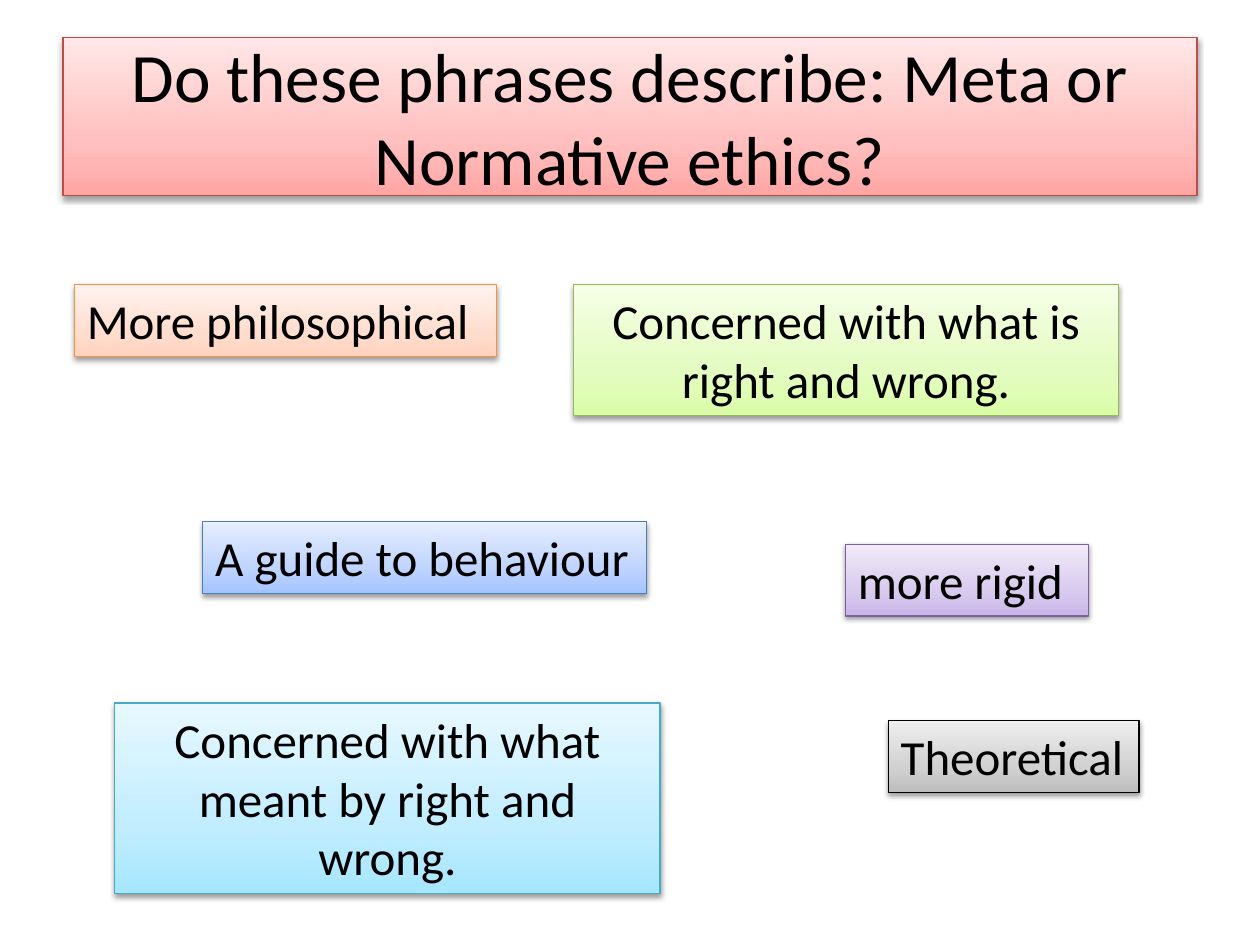
from copy import deepcopy

from lxml import etree
from pptx import Presentation
from pptx.dml.color import RGBColor
from pptx.enum import text as t
from pptx.oxml import ns
from pptx.util import Inches, Pt

# Each tone: gradient from bottom to top, then the outline
TONES = {
    "red": ("FFA6A5", "FFC0BF", "FFE7E7", "BF4C48"),
    "gray": ("BDBDBD", "D1D1D1", "EEEEEE", "000000"),
    "blue": ("A4C4FF", "BFD4FF", "E6EEFF", "4B7EBC"),
    "purple": ("C9B5E8", "D8CBEE", "F0EAF9", "7D60A0"),
    "orange": ("FFD2BD", "FFDED0", "FFF2ED", "F69240"),
    "green": ("DAFDA7", "E4FCC2", "F5FFE7", "98B955"),
    "aqua": ("A7E6FF", "C1EDFF", "E7F8FF", "46AAC5"),
}
INK = "000000"
STOPS = (0, 0.35, 1)

LEFT, MID = t.PP_ALIGN.LEFT, t.PP_ALIGN.CENTER
PHRASES = [
    ("Theoretical", "gray", (7.05, 5.72, 1.99, 0.57), LEFT),
    ("A guide to behaviour", "blue", (1.61, 4.14, 3.52, 0.57), LEFT),
    ("more rigid", "purple", (6.71, 4.32, 1.93, 0.57), LEFT),
    ("More philosophical", "orange", (0.59, 2.26, 3.35, 0.57), LEFT),
    ("Concerned with what is right and wrong.", "green",
     (4.55, 2.26, 4.33, 1.04), MID),
    ("Concerned with what meant by right and wrong.", "aqua",
     (0.91, 5.58, 4.33, 1.51), MID),
]


def write(shape, words, size=28, align=LEFT, anchor=t.MSO_ANCHOR.TOP,
          fit=t.MSO_AUTO_SIZE.SHAPE_TO_FIT_TEXT):
    frame = shape.text_frame
    frame.word_wrap = True
    frame.auto_size = fit
    frame.vertical_anchor = anchor
    para = frame.paragraphs[0]
    para.alignment = align
    run = para.add_run()
    run.text = words
    run.font.name = "Calibri"
    run.font.size = Pt(size)
    run.font.color.rgb = RGBColor.from_string(INK)


def shade(shape):
    """Add a soft shadow just below the shape."""
    props = shape.element.spPr
    effects = etree.SubElement(props, ns.qn("a:effectLst"))
    shadow = etree.SubElement(
        effects, ns.qn("a:outerShdw"), blurRad=str(Pt(3.1)),
        dist=str(Pt(1.6)), dir="5400000", rotWithShape="0")
    color = etree.SubElement(shadow, ns.qn("a:srgbClr"), val=INK)
    etree.SubElement(color, ns.qn("a:alpha"), val="38000")


def paint(shape, tone):
    """Give the shape its gradient, outline and shadow."""
    *fills, edge = TONES[tone]
    shape.fill.gradient()
    shape.fill.gradient_angle = 90
    stops = shape.element.spPr.find(".//" + ns.qn("a:gsLst"))
    stops.append(deepcopy(stops[0]))
    for stop, place, color in zip(shape.fill.gradient_stops, STOPS, fills):
        stop.position = place
        stop.color.rgb = RGBColor.from_string(color)
    shape.line.color.rgb = RGBColor.from_string(edge)
    shape.line.width = Pt(0.75)
    shade(shape)


def add_title(slide, words):
    title = slide.shapes.title
    title.left, title.top = Inches(0.5), Inches(0.3)
    title.width, title.height = Inches(9), Inches(1.25)
    paint(title, "red")
    write(title, words, size=39.6, align=MID, anchor=t.MSO_ANCHOR.MIDDLE,
          fit=t.MSO_AUTO_SIZE.NONE)


def add_phrase(slide, words, tone, place, align):
    box = slide.shapes.add_textbox(*map(Inches, place))
    paint(box, tone)
    write(box, words, align=align)


def main():
    deck = Presentation()
    deck.slide_width, deck.slide_height = Inches(10), Inches(7.5)
    slide = deck.slides.add_slide(deck.slide_layouts[5])
    add_title(slide, "Do these phrases describe: Meta or Normative ethics?")
    for phrase in PHRASES:
        add_phrase(slide, *phrase)
    deck.save("out.pptx")


if __name__ == "__main__":
    main()
